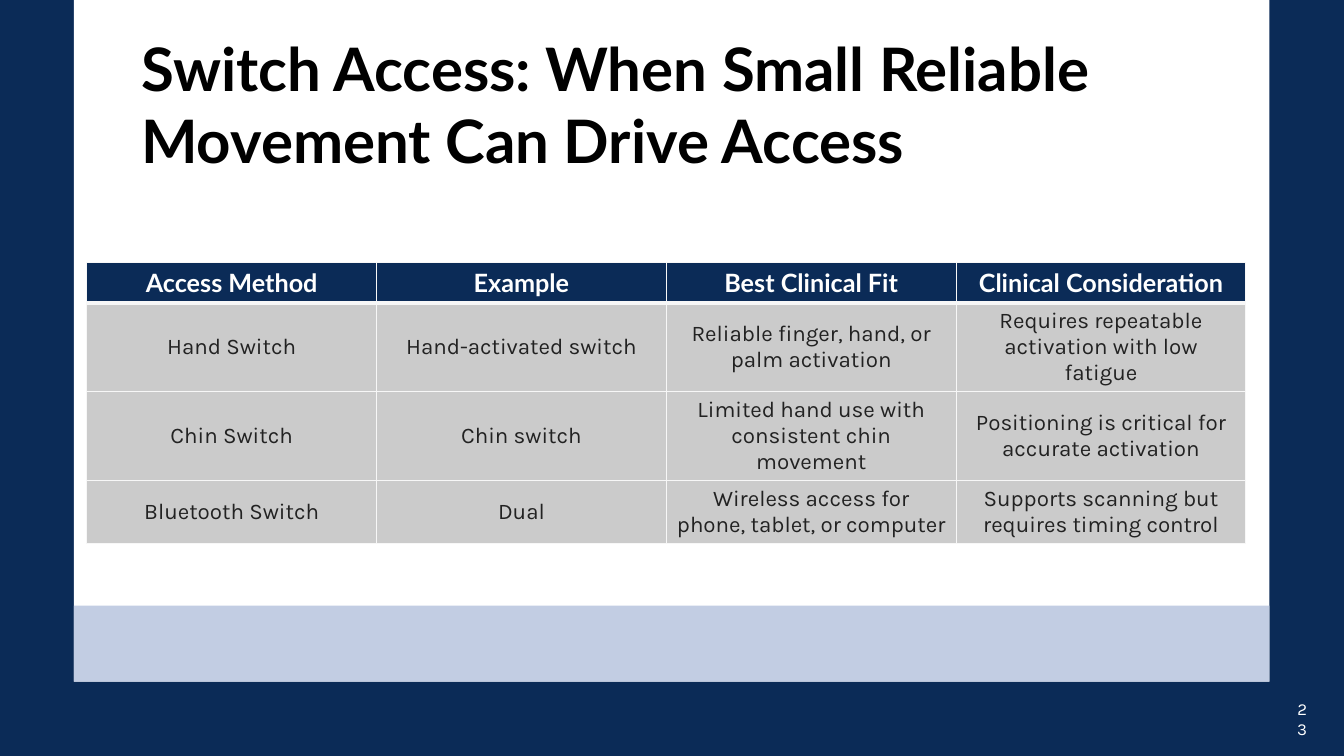
from dataclasses import dataclass

from lxml.etree import SubElement
from pptx import Presentation
from pptx.dml.color import RGBColor
from pptx.enum.shapes import MSO_SHAPE
from pptx.enum.text import MSO_ANCHOR, MSO_AUTO_SIZE, PP_ALIGN
from pptx.oxml.ns import qn
from pptx.slide import Slide
from pptx.table import _Cell
from pptx.text.text import TextFrame
from pptx.util import Pt

NAVY, WHITE, PERIWINKLE = "0B2B57", "FFFFFF", "C2CDE3"
BLACK, CHARCOAL, GREY, RULE = "000000", "222222", "CBCBCB", "F7F7F7"


@dataclass(frozen=True)
class TextStyle:
    font: str
    size: float
    color: str
    bold: bool = False
    align: PP_ALIGN = PP_ALIGN.CENTER


@dataclass(frozen=True)
class Panel:
    top: float
    height: float
    color: str


TITLE = TextStyle("Lato", 42.8, BLACK, True, PP_ALIGN.LEFT)
HEADER = TextStyle("Lato", 18, WHITE, True)
BODY = TextStyle("Karla", 16, CHARCOAL)
PAGE_NUMBER = TextStyle("Karla", 12, WHITE)

PANEL_LEFT, PANEL_WIDTH = 52.7, 854
PANELS = (Panel(0, 486.9, WHITE), Panel(432.6, 54.3, PERIWINKLE))

COLUMN_WIDTH = 207
ROW_HEIGHTS = (28.6, 62.9, 62.9, 45)
ACCESS_METHODS = (
    ("Access Method", "Example", "Best Clinical Fit", "Clinical Consideration"),
    ("Hand Switch", "Hand-activated switch",
     "Reliable finger, hand, or palm activation",
     "Requires repeatable activation with low fatigue"),
    ("Chin Switch", "Chin switch",
     "Limited hand use with consistent chin movement",
     "Positioning is critical for accurate activation"),
    ("Bluetooth Switch", "Dual",
     "Wireless access for phone, tablet, or computer",
     "Supports scanning but requires timing control"),
)


def rgb(color: str) -> RGBColor:
    return RGBColor.from_string(color)


def write(frame: TextFrame, text: str, style: TextStyle) -> None:
    paragraph = frame.paragraphs[0]
    paragraph.alignment = style.align
    run = paragraph.add_run()
    run.text = text
    run.font.name = style.font
    run.font.size = Pt(style.size)
    run.font.bold = style.bold
    run.font.color.rgb = rgb(style.color)


def add_panel(slide: Slide, panel: Panel) -> None:
    box = slide.shapes.add_shape(MSO_SHAPE.RECTANGLE, Pt(PANEL_LEFT), Pt(panel.top),
                                 Pt(PANEL_WIDTH), Pt(panel.height))
    box.shadow.inherit = False
    box.fill.solid()
    box.fill.fore_color.rgb = rgb(panel.color)
    box.line.fill.background()


def add_title(slide: Slide, text: str) -> None:
    title = slide.shapes.title
    title.left, title.top, title.width, title.height = Pt(97.2), Pt(19.4), Pt(746), Pt(109.4)
    frame = title.text_frame
    frame.word_wrap = True
    frame.auto_size = MSO_AUTO_SIZE.NONE
    frame.vertical_anchor = MSO_ANCHOR.MIDDLE
    frame.margin_left = frame.margin_right = Pt(3.6)
    frame.margin_top = frame.margin_bottom = Pt(3.6)
    write(frame, text, TITLE)
    # The title placeholder comes first, so lift it above the panels.
    title.element.getparent().append(title.element)


def set_borders(cell: _Cell, top: float, bottom: float) -> None:
    properties = cell._tc.get_or_add_tcPr()
    for side, width in (("L", 1), ("R", 1), ("T", top), ("B", bottom)):
        line = SubElement(properties, qn(f"a:ln{side}"), w=str(Pt(width)))
        fill = SubElement(line, qn("a:solidFill"))
        SubElement(fill, qn("a:srgbClr"), val=RULE)


def add_access_table(slide: Slide) -> None:
    columns = len(ACCESS_METHODS[0])
    table = slide.shapes.add_table(len(ACCESS_METHODS), columns, Pt(62), Pt(187.6),
                                   Pt(COLUMN_WIDTH * columns), Pt(sum(ROW_HEIGHTS))).table
    for column in table.columns:
        column.width = Pt(COLUMN_WIDTH)
    for r, (height, entries) in enumerate(zip(ROW_HEIGHTS, ACCESS_METHODS)):
        table.rows[r].height = Pt(height)
        for c, entry in enumerate(entries):
            cell = table.cell(r, c)
            set_borders(cell, top=3 if r == 1 else 1, bottom=3 if r == 0 else 1)
            cell.fill.solid()
            cell.fill.fore_color.rgb = rgb(NAVY if r == 0 else GREY)
            cell.vertical_anchor = MSO_ANCHOR.MIDDLE
            write(cell.text_frame, entry, HEADER if r == 0 else BODY)


def add_page_number(slide: Slide, number: str) -> None:
    """Add a box narrow enough to stack the two digits."""
    frame = slide.shapes.add_textbox(Pt(921.6), Pt(501), Pt(24), Pt(24.5)).text_frame
    frame.word_wrap = True
    frame.vertical_anchor = MSO_ANCHOR.MIDDLE
    frame.margin_left, frame.margin_right = Pt(3), Pt(10)
    frame.margin_top = frame.margin_bottom = Pt(5)
    write(frame, number, PAGE_NUMBER)


def main() -> None:
    deck = Presentation()
    deck.slide_width, deck.slide_height = Pt(960), Pt(540)
    slide = deck.slides.add_slide(deck.slide_layouts.get_by_name("Title Only"))
    slide.background.fill.solid()
    slide.background.fill.fore_color.rgb = rgb(NAVY)
    add_page_number(slide, "23")
    for panel in PANELS:
        add_panel(slide, panel)
    add_title(slide, "Switch Access: When Small Reliable Movement Can Drive Access")
    add_access_table(slide)
    deck.save("out.pptx")


if __name__ == "__main__":
    main()
